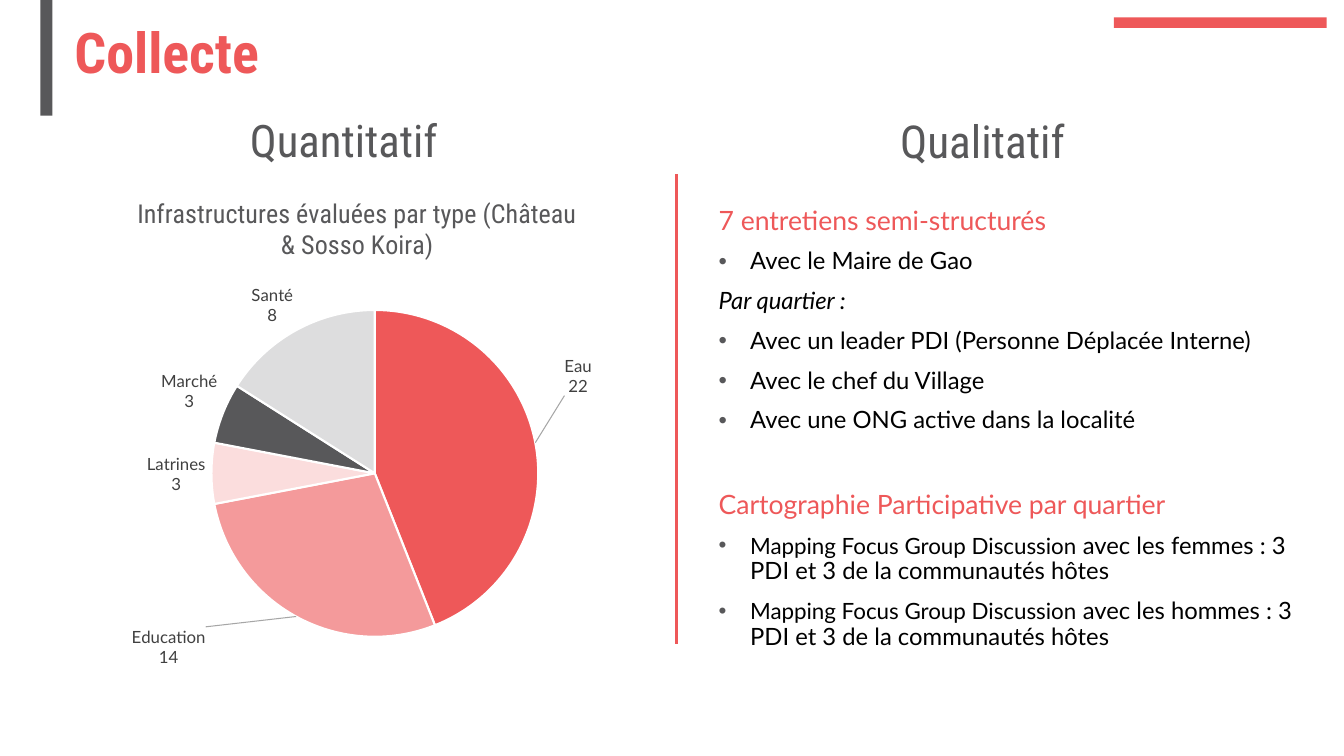
from copy import deepcopy

from pptx import Presentation
from pptx.chart.data import CategoryChartData
from pptx.dml.color import RGBColor
from pptx.enum.chart import XL_CHART_TYPE as ChartType, XL_LABEL_POSITION as LabelPosition
from pptx.enum.shapes import MSO_CONNECTOR as Connector, MSO_SHAPE as Shape
from pptx.enum.text import MSO_ANCHOR as Anchor, PP_ALIGN as Align
from pptx.oxml import parse_xml
from pptx.oxml.ns import nsdecls, qn
from pptx.util import Pt

COLORS = {
    "red": "EE5859", "rose": "F49A9B", "blush": "FBDDDD", "dark": "58585A",
    "pale": "DDDDDE", "label": "404040", "leader": "A6A6A6", "black": "000000", "white": "FFFFFF",
}
HEAD, BODY = "Roboto Condensed", "Lato"
TITLE = dict(name=HEAD, size=40, color="red", bold=True)
COLUMN = dict(name=HEAD, size=32, color="dark")
TOPIC = dict(name=BODY, size=19, color="red")
ITEM = dict(name=BODY, size=17, color="black")
SMALL = {**ITEM, "size": 16}
NOTE = {**ITEM, "italic": True}
CHART_TITLE = dict(name=HEAD, size=18.6, color="dark", bold=False)
CHART_LABEL = dict(name=BODY, size=12, color="label")

MAPPING = "Mapping Focus Group Discussion"
LINES = [
    dict(spans=[("7 entretiens semi-structurés", TOPIC)], before=0, spacing=1.0),
    dict(spans=[("Avec le Maire de Gao", ITEM)], bullet=True),
    dict(spans=[("Par quartier :", NOTE)]),
    dict(spans=[("Avec un leader PDI (Personne Déplacée Interne)", ITEM)], bullet=True),
    dict(spans=[("Avec le chef du Village", ITEM)], bullet=True),
    dict(spans=[("Avec une ONG active dans la localité", ITEM)], bullet=True),
    dict(spans=[("Cartographie Participative par quartier", TOPIC)], before=38.4, spacing=1.0),
    *(dict(spans=[(MAPPING, SMALL),
                  (f" avec les {group} : 3 PDI et 3 de la communautés hôtes", ITEM)], bullet=True)
      for group in ("femmes", "hommes")),
]
SLICES = [("Eau", 22, "red"), ("Education", 14, "rose"), ("Latrines", 3, "blush"),
          ("Marché", 3, "dark"), ("Santé", 8, "pale")]
LABEL_SHIFTS = {0: (0.04, -0.09), 1: (-0.15, 0.01)}
PLOT_FRAME = dict(x=0.25, y=0.26, w=0.56, h=0.64)


def rgb(name):
    return RGBColor.from_string(COLORS[name])


def manual_layout(modes, values):
    parts = [f'<c:{key} val="{value}"/>' for key, value in {**modes, **values}.items()]
    return parse_xml(f'<c:layout {nsdecls("c")}><c:manualLayout>{"".join(parts)}'
                     "</c:manualLayout></c:layout>")


class SlideBuilder:
    """Holds the text style and the current slide, and adds elements to it."""

    def __init__(self, page):
        self.page = page

    def style(self, font, formats):
        for key, value in formats.items():
            if key == "color":
                font.color.rgb = rgb(value)
            else:
                setattr(font, key, Pt(value) if key == "size" else value)

    def bar(self, left, top, width, height, color):
        box = self.page.shapes.add_shape(Shape.RECTANGLE, Pt(left), Pt(top), Pt(width), Pt(height))
        box.shadow.inherit = False
        box.fill.solid()
        box.fill.fore_color.rgb = rgb(color)
        box.line.fill.background()

    def title(self, text, left, top, width, height):
        box = self.page.shapes.title
        box.left, box.top, box.width, box.height = Pt(left), Pt(top), Pt(width), Pt(height)
        box.text_frame.vertical_anchor = Anchor.MIDDLE
        self.paragraph(box.text_frame.paragraphs[0], [(text, TITLE)], before=0)

    def text(self, lines, left, top, width, height):
        box = self.page.shapes.add_textbox(Pt(left), Pt(top), Pt(width), Pt(height))
        frame = box.text_frame
        frame.word_wrap = True
        for index, line in enumerate(lines):
            self.paragraph(frame.add_paragraph() if index else frame.paragraphs[0], **line)

    def paragraph(self, para, spans, before=10, spacing=0.9, bullet=False):
        if bullet:
            self.bullet(para)
        para.alignment = Align.LEFT
        para.line_spacing = spacing
        para.space_before = Pt(before)
        for text, formats in spans:
            span = para.add_run()
            span.text = text
            self.style(span.font, formats)

    def bullet(self, para):
        props = para._p.get_or_add_pPr()
        props.set("marL", str(Pt(22.5)))
        props.set("indent", str(-Pt(22.5)))
        for xml in (f'<a:buClr {nsdecls("a")}><a:srgbClr val="{COLORS["dark"]}"/></a:buClr>',
                    f'<a:buFont {nsdecls("a")} typeface="Arial"/>',
                    f'<a:buChar {nsdecls("a")} char="•"/>'):
            props.append(parse_xml(xml))

    def divider(self, x, top, bottom):
        line = self.page.shapes.add_connector(Connector.STRAIGHT, Pt(x), Pt(top), Pt(x), Pt(bottom))
        line.line.color.rgb = rgb("red")
        line.line.width = Pt(2.25)
        line._element.spPr.append(parse_xml(f'<a:effectLst {nsdecls("a")}/>'))

    def pie(self, title, slices, left, top, width, height):
        names, values, colors = zip(*slices)
        data = CategoryChartData()
        data.categories = names
        data.add_series("Series 1", values)
        chart = self.page.shapes.add_chart(
            ChartType.PIE, Pt(left), Pt(top), Pt(width), Pt(height), data).chart
        self.style(chart.font, {**CHART_LABEL, "size": 10, "color": "black"})
        chart.has_legend = False
        chart.has_title = True
        para = chart.chart_title.text_frame.paragraphs[0]
        span = para.add_run()
        span.text = title
        self.style(span.font, CHART_TITLE)
        plot = chart.plots[0]
        plot.vary_by_categories = True
        series = plot.series[0]
        for index, color in enumerate(colors):
            look = series.points[index].format
            look.fill.solid()
            look.fill.fore_color.rgb = rgb(color)
            look.line.color.rgb = rgb("white")
            look.line.width = Pt(1.5)
        labels = series.data_labels
        labels.show_value = labels.show_category_name = True
        labels.show_percentage = False
        labels.position = LabelPosition.OUTSIDE_END
        self.style(labels.font, CHART_LABEL)
        self.place_labels(labels._element)
        area = chart._chartSpace.chart.plotArea
        for old in area.findall(qn("c:layout")):
            area.remove(old)
        modes = dict(layoutTarget="inner", xMode="edge", yMode="edge")
        area.insert(0, manual_layout(modes, PLOT_FRAME))

    def place_labels(self, group):
        for old in group.findall(qn("c:showLeaderLines")):
            group.remove(old)
        group.append(parse_xml(f'<c:separator {nsdecls("c")}>\n</c:separator>'))
        shared = list(group)
        for position, (index, (x, y)) in enumerate(LABEL_SHIFTS.items()):
            label = parse_xml(f'<c:dLbl {nsdecls("c")}><c:idx val="{index}"/></c:dLbl>')
            label.append(manual_layout({}, dict(x=x, y=y)))
            label.extend(deepcopy(part) for part in shared)
            group.insert(position, label)
        group.append(parse_xml(f'<c:showLeaderLines {nsdecls("c")} val="1"/>'))
        group.append(parse_xml(
            f'<c:leaderLines {nsdecls("c", "a")}><c:spPr><a:ln w="{Pt(0.75)}"><a:solidFill>'
            f'<a:srgbClr val="{COLORS["leader"]}"/></a:solidFill></a:ln></c:spPr></c:leaderLines>'))


def main():
    deck = Presentation()
    deck.slide_width, deck.slide_height = Pt(960), Pt(540)
    builder = SlideBuilder(deck.slides.add_slide(deck.slide_layouts[5]))
    builder.bar(795.6, 12.4, 152, 7.6, "red")
    builder.bar(28.8, 0, 8.6, 82.6, "dark")
    builder.title("Collecte", 46, 15.8, 662, 48)
    builder.text([dict(spans=[("Quantitatif", COLUMN)], before=0)], 171.4, 81.4, 167, 43)
    builder.text([dict(spans=[("Qualitatif", {**COLUMN, "size": 32.4})], before=0)],
                 635.8, 81.4, 137, 43)
    builder.text(LINES, 506.2, 141.8, 430.6, 365.8)
    builder.divider(483, 124.6, 460)
    builder.pie("Infrastructures évaluées par type (Château & Sosso Koira)", SLICES,
                46.8, 126, 416.9, 365.8)
    deck.save("out.pptx")


if __name__ == "__main__":
    main()
